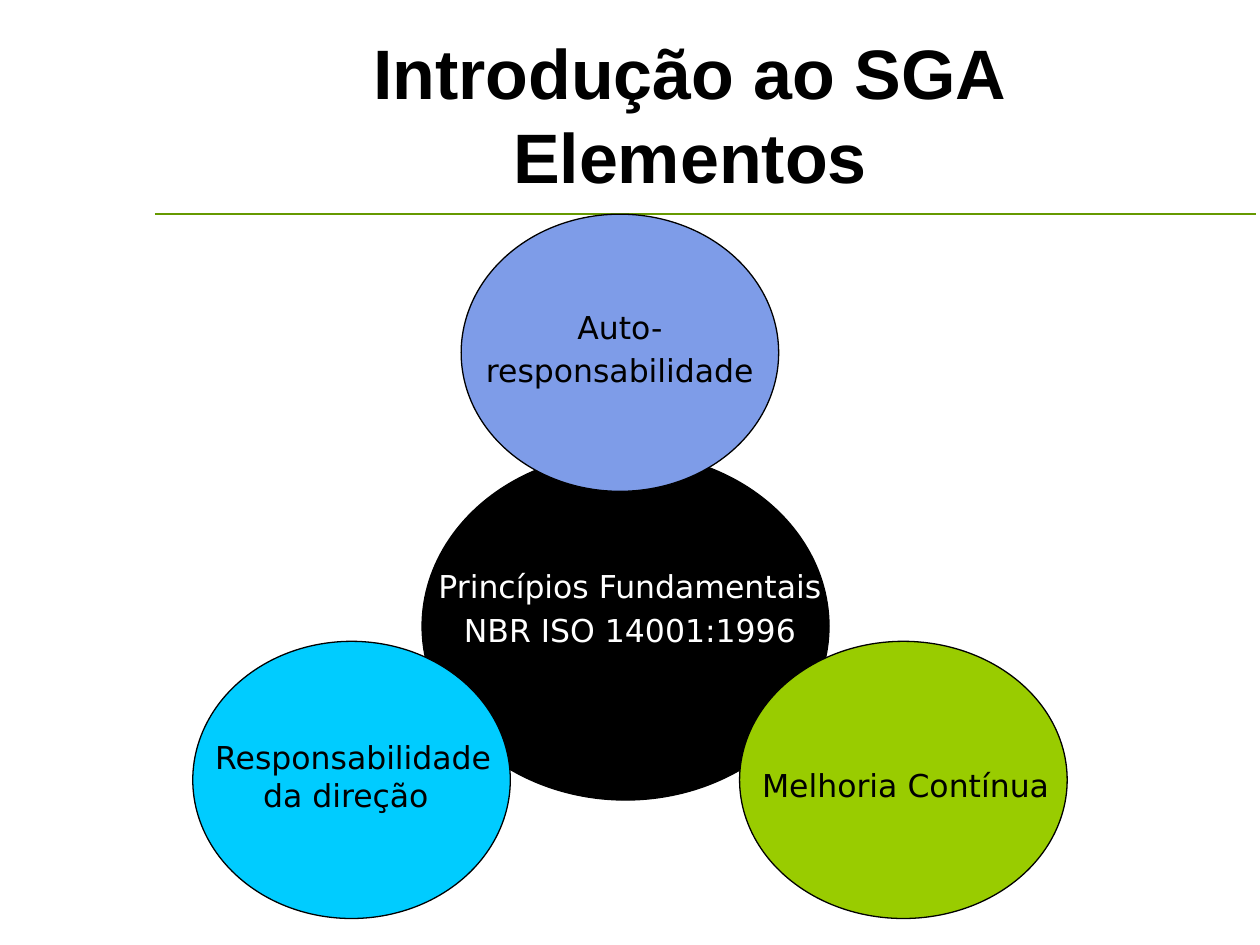
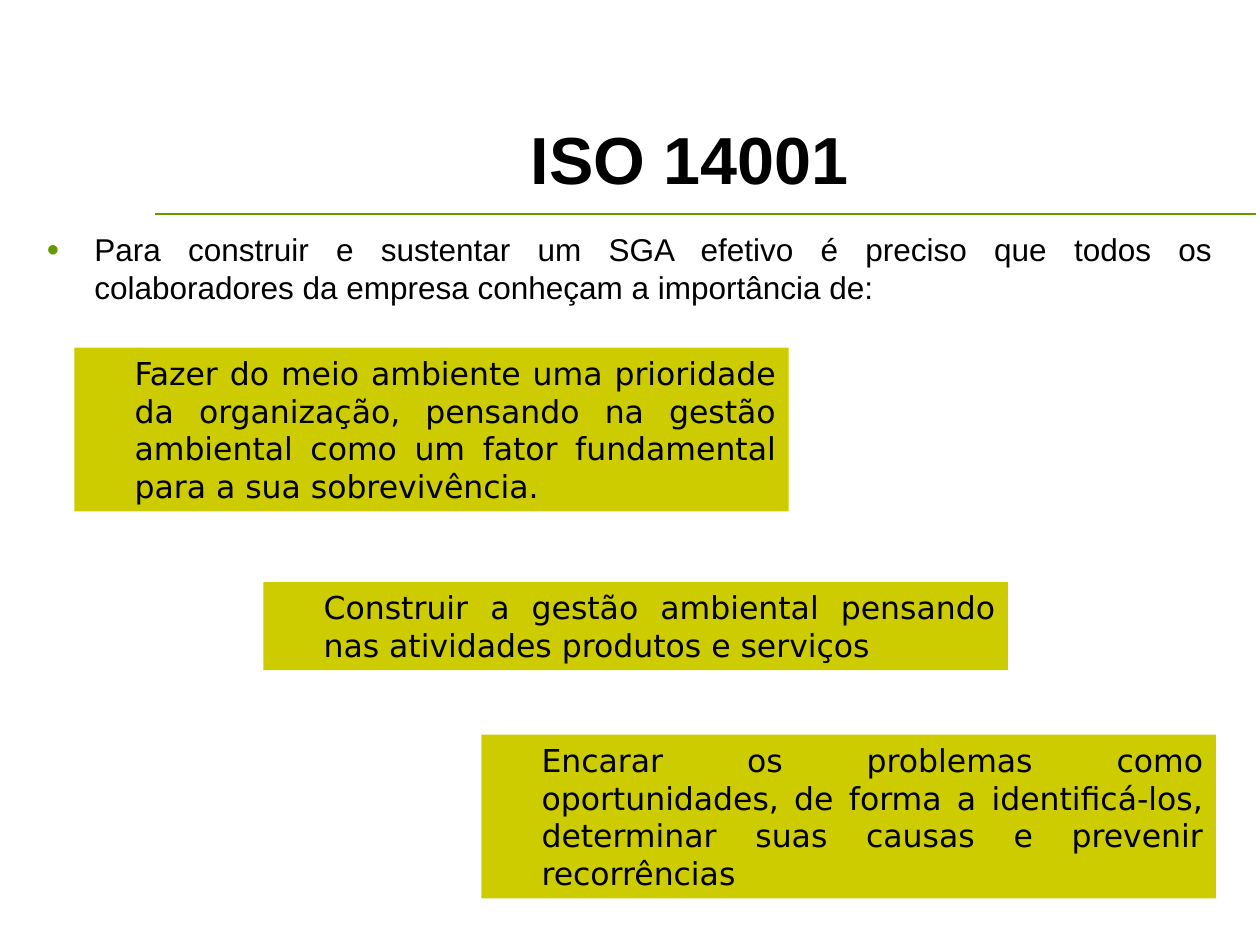
from dataclasses import dataclass

import pptx
import pptx.dml.color
import pptx.enum.shapes
import pptx.enum.text
import pptx.oxml
import pptx.oxml.ns
import pptx.util
from pptx.util import Inches

RGBColor = pptx.dml.color.RGBColor
Align = pptx.enum.text.PP_ALIGN
Anchor = pptx.enum.text.MSO_ANCHOR
Shape = pptx.enum.shapes.MSO_SHAPE
Pt = pptx.util.Pt

BLACK = RGBColor(0x00, 0x00, 0x00)
WHITE = RGBColor(0xFF, 0xFF, 0xFF)
RULE_GREEN = RGBColor(0x66, 0x99, 0x00)
LIME = RGBColor(0x99, 0xCC, 0x00)
BLUE = RGBColor(0x7E, 0x9C, 0xE8)
CYAN = RGBColor(0x00, 0xCC, 0xFF)
OLIVE = RGBColor(0xCC, 0xCC, 0x00)

TITLE_FONT = "Arial"
LABEL_FONT = "DejaVu Sans"
INDENT = Inches(0.38)
TITLE_LAYOUT = 5

Box = tuple[float, float, float, float]


@dataclass
class Circle:
    box: Box
    fill: RGBColor
    text: str
    text_box: Box
    color: RGBColor = BLACK
    align: Align = Align.LEFT
    line_spacing: float = 1.0


@dataclass
class Panel:
    box: Box
    text: str


CIRCLES = [
    Circle((3.35, 3.59, 3.23, 2.76), BLACK, "Princípios Fundamentais\nNBR ISO 14001:1996",
           (3.11, 4.69, 3.78, 0.49), WHITE, Align.CENTER, 0.05),
    Circle((5.87, 5.09, 2.6, 2.2), LIME, "Melhoria Contínua", (5.95, 6.03, 2.68, 0.4)),
    Circle((3.66, 1.7, 2.52, 2.2), BLUE, "Auto-\nresponsabilidade",
           (3.19, 2.63, 3.46, 0.49), BLACK, Align.CENTER, 0.05),
    Circle((1.53, 5.09, 2.52, 2.2), CYAN, "Responsabilidade da direção",
           (1.61, 5.81, 2.68, 0.7)),
]

PANELS = [
    Panel((0.59, 2.76, 5.67, 1.3),
          "Fazer do meio ambiente uma prioridade da organização, pensando na gestão "
          "ambiental como um fator fundamental para a sua sobrevivência."),
    Panel((2.09, 4.62, 5.91, 0.7),
          "Construir a gestão ambiental pensando nas atividades produtos e serviços"),
    Panel((3.82, 5.83, 5.83, 1.3),
          "Encarar os problemas como oportunidades, de forma a identificá-los, "
          "determinar suas causas e prevenir recorrências"),
]


def inches(box: Box) -> list[int]:
    return [Inches(v) for v in box]


def add_bullet(p) -> None:
    pPr = p._p.get_or_add_pPr()
    ns = pptx.oxml.ns.nsdecls("a")
    for xml in (f'<a:buClr {ns}><a:srgbClr val="{RULE_GREEN}"/></a:buClr>',
                f'<a:buSzPct {ns} val="70000"/>',
                f'<a:buFont {ns} typeface="{TITLE_FONT}"/>',
                f'<a:buChar {ns} char="●"/>'):
        pPr.append(pptx.oxml.parse_xml(xml))


def write(tf, text: str, *, size: float = 18, font: str = LABEL_FONT,
          color: RGBColor = BLACK, bold: bool = False, align: Align = Align.LEFT,
          anchor: Anchor = Anchor.TOP, left: int = 0, first: int = 0,
          line_spacing: float = 1.0, before: float = 0, after: float = 0,
          bullet: bool = False) -> None:
    """Fill a text frame; a newline starts a paragraph, a vertical tab a line."""
    tf.word_wrap = True
    tf.auto_size = pptx.enum.text.MSO_AUTO_SIZE.NONE
    tf.vertical_anchor = anchor
    for i, line in enumerate(text.split("\n")):
        p = tf.add_paragraph() if i else tf.paragraphs[0]
        p.text = line
        p.alignment = align
        p.line_spacing = line_spacing
        p.space_before = Pt(before if i else 0)
        p.space_after = Pt(after)
        pPr = p._p.get_or_add_pPr()
        pPr.set("marL", str(left))
        pPr.set("indent", str(first))
        if bullet:
            add_bullet(p)
        for r in p.runs:
            r.font.size = Pt(size)
            r.font.name = font
            r.font.bold = bold
            r.font.color.rgb = color


def add_filled(s, kind: Shape, box: Box, fill: RGBColor, outline: bool = False):
    sp = s.shapes.add_shape(kind, *inches(box))
    sp.shadow.inherit = False
    sp.fill.solid()
    sp.fill.fore_color.rgb = fill
    if outline:
        sp.line.color.rgb = BLACK
        sp.line.width = Pt(0.75)
    else:
        sp.line.fill.background()
    return sp


def add_titled_slide(prs, title: str, size: float):
    s = prs.slides.add_slide(prs.slide_layouts[TITLE_LAYOUT])
    sp = s.shapes.title
    sp.left, sp.top, sp.width, sp.height = inches((1.3, 0.13, 8.35, 1.49))
    write(sp.text_frame, title, size=size, font=TITLE_FONT, bold=True,
          align=Align.CENTER, anchor=Anchor.BOTTOM)
    rule = s.shapes.add_connector(pptx.enum.shapes.MSO_CONNECTOR.STRAIGHT,
                                  *inches((1.23, 1.7, 9.97, 1.7)))
    rule.line.color.rgb = RULE_GREEN
    rule.line.width = Pt(1)
    rule._element.spPr.append(
        pptx.oxml.parse_xml(f'<a:effectLst {pptx.oxml.ns.nsdecls("a")}/>'))
    return s


def build_elements(prs) -> None:
    s = add_titled_slide(prs, "Introdução ao SGA\vElementos", 40)
    for c in CIRCLES:
        add_filled(s, Shape.OVAL, c.box, c.fill, outline=True)
        label = s.shapes.add_textbox(*inches(c.text_box))
        write(label.text_frame, c.text, color=c.color, align=c.align, left=INDENT,
              first=-INDENT, line_spacing=c.line_spacing, before=9, after=15)


def build_iso(prs) -> None:
    s = add_titled_slide(prs, "ISO 14001", 38)
    body = s.shapes.add_textbox(*inches((0.27, 1.78, 9.45, 0.8)))
    write(body.text_frame,
          "Para construir e sustentar um SGA efetivo é preciso que todos os "
          "colaboradores da empresa conheçam a importância de:",
          font=TITLE_FONT, align=Align.JUSTIFY, left=INDENT, first=-INDENT, bullet=True)
    for panel in PANELS:
        sp = add_filled(s, Shape.RECTANGLE, panel.box, OLIVE)
        write(sp.text_frame, panel.text, align=Align.JUSTIFY, left=INDENT)


def main() -> None:
    prs = pptx.Presentation()
    prs.slide_width, prs.slide_height = Inches(10), Inches(7.5)
    build_elements(prs)
    build_iso(prs)
    prs.save("out.pptx")


if __name__ == "__main__":
    main()
